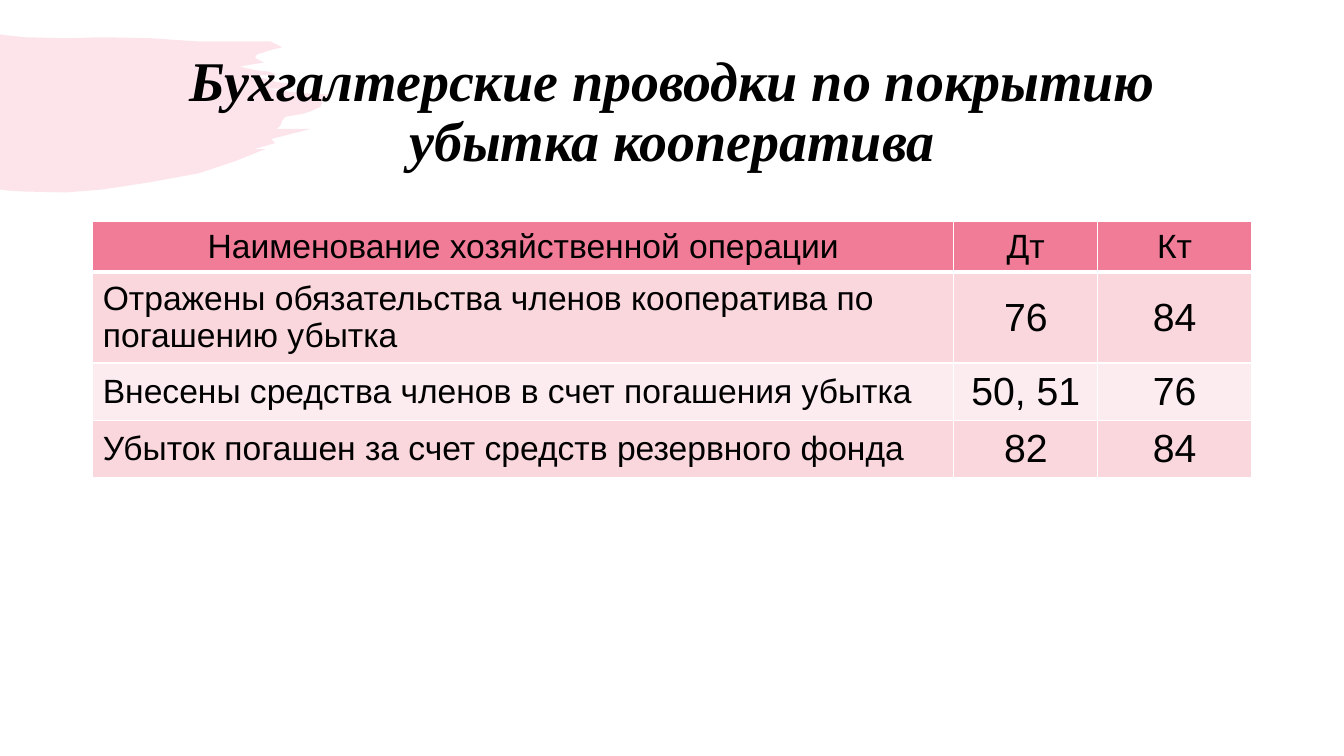
import pptx
import pptx.dml.color
import pptx.enum.text
import pptx.oxml
import pptx.oxml.ns
import pptx.util

Pt = pptx.util.Pt
RGBColor = pptx.dml.color.RGBColor
PP_ALIGN = pptx.enum.text.PP_ALIGN
MSO_ANCHOR = pptx.enum.text.MSO_ANCHOR

BLACK = RGBColor(0x00, 0x00, 0x00)
WHITE = RGBColor(0xFF, 0xFF, 0xFF)
PINK = RGBColor(0xF0, 0x7C, 0x98)
LIGHT_PINK = RGBColor(0xF9, 0xD7, 0xDD)
PALE_PINK = RGBColor(0xFC, 0xEC, 0xEF)

# Brush outline in hundredths of an inch, clockwise from the top left
BRUSH_UNIT = Pt(0.72)
BRUSH = [
    (0, 34), (6, 35), (25, 37), (66, 38), (102, 37), (151, 38), (194, 41),
    (248, 41), (268, 41), (280, 47), (271, 49), (255, 54), (253, 57),
    (256, 59), (262, 62), (238, 66), (246, 68), (256, 70), (266, 71),
    (275, 74), (251, 75), (263, 78), (273, 81), (280, 82), (288, 83),
    (290, 85), (287, 88), (284, 88), (263, 88), (296, 92), (330, 94),
    (321, 97), (318, 106), (307, 111), (300, 113), (283, 116), (280, 120),
    (278, 125), (274, 128), (308, 128), (269, 138), (273, 142), (252, 148),
    (263, 148), (233, 160), (197, 172), (148, 181), (102, 188), (65, 191),
    (23, 190), (7, 189), (0, 188),
]

HEADER = ["Наименование хозяйственной операции", "Дт", "Кт"]
ENTRIES = [
    ["Отражены обязательства членов кооператива по погашению убытка", "76", "84"],
    ["Внесены средства членов в счет погашения убытка", "50, 51", "76"],
    ["Убыток погашен за счет средств резервного фонда", "82", "84"],
]


class SlideBuilder:
    """Holds the style and the current slide."""

    title_font = "Times New Roman"
    table_font = "Arial"

    def __init__(self, presentation):
        self.slide = presentation.slides.add_slide(presentation.slide_layouts[6])

    def brush(self, points, color, opacity):
        builder = self.slide.shapes.build_freeform(*points[0], scale=BRUSH_UNIT)
        builder.add_line_segments(points[1:], close=True)
        shape = builder.convert_to_shape()
        shape.shadow.inherit = False
        shape.line.fill.background()
        shape.fill.solid()
        shape.fill.fore_color.rgb = color
        color_element = shape.fill._xPr.find(".//" + pptx.oxml.ns.qn("a:srgbClr"))
        color_element.append(pptx.oxml.parse_xml(
            f'<a:alpha {pptx.oxml.ns.nsdecls("a")} val="{opacity * 1000}"/>'))

    def title(self, text, left, top, width, height):
        shape = self.slide.shapes.add_textbox(Pt(left), Pt(top), Pt(width), Pt(height))
        frame = shape.text_frame
        frame.word_wrap = True
        frame.vertical_anchor = MSO_ANCHOR.MIDDLE
        paragraph = frame.paragraphs[0]
        paragraph.text = text
        paragraph.line_spacing = 0.9
        self.style(paragraph, self.title_font, 40, PP_ALIGN.CENTER)
        paragraph.font.bold = True
        paragraph.font.italic = True

    def table(self, rows, left, top, widths, heights):
        table = self.slide.shapes.add_table(
            len(rows), len(widths), Pt(left), Pt(top),
            Pt(sum(widths)), Pt(sum(heights))).table
        for column, width in zip(table.columns, widths):
            column.width = Pt(width)
        for row, height in zip(table.rows, heights):
            row.height = Pt(height)
        for i, texts in enumerate(rows):
            for j, text in enumerate(texts):
                self.cell(table.cell(i, j), text, i, j)

    def cell(self, cell, text, row, column):
        is_header = row == 0
        is_name = column == 0
        cell.vertical_anchor = MSO_ANCHOR.MIDDLE
        paragraph = cell.text_frame.paragraphs[0]
        paragraph.text = text
        self.style(paragraph, self.table_font,
                   24 if is_header or is_name else 28,
                   PP_ALIGN.LEFT if is_name and not is_header else PP_ALIGN.CENTER)
        paragraph.font.bold = False
        # White borders, thick between the header and the entries
        self.border(cell, "lnL", 1)
        self.border(cell, "lnR", 1)
        self.border(cell, "lnT", 3 if row == 1 else 1)
        self.border(cell, "lnB", 3 if is_header else 1)
        cell.fill.solid()
        cell.fill.fore_color.rgb = (
            PINK if is_header else LIGHT_PINK if row % 2 else PALE_PINK)

    def border(self, cell, side, width):
        cell._tc.get_or_add_tcPr().append(pptx.oxml.parse_xml(
            f'<a:{side} {pptx.oxml.ns.nsdecls("a")} w="{Pt(width)}"><a:solidFill>'
            f'<a:srgbClr val="{WHITE}"/></a:solidFill></a:{side}>'))

    def style(self, paragraph, font_name, size, alignment):
        paragraph.alignment = alignment
        paragraph.font.name = font_name
        paragraph.font.size = Pt(size)
        paragraph.font.color.rgb = BLACK


def main():
    presentation = pptx.Presentation()
    presentation.slide_width = Pt(960)
    presentation.slide_height = Pt(540)
    builder = SlideBuilder(presentation)

    # Background brush stroke
    builder.brush(BRUSH, PINK, opacity=20)

    # Title
    builder.title("Бухгалтерские проводки по покрытию убытка кооператива",
                  66, 28.8, 828, 104.4)

    # Accounting entries
    builder.table([HEADER] + ENTRIES, 66.24, 158.4,
                  widths=[615, 103, 109.5], heights=[34, 60.8, 38.4, 38.4])

    presentation.save("out.pptx")


if __name__ == "__main__":
    main()
